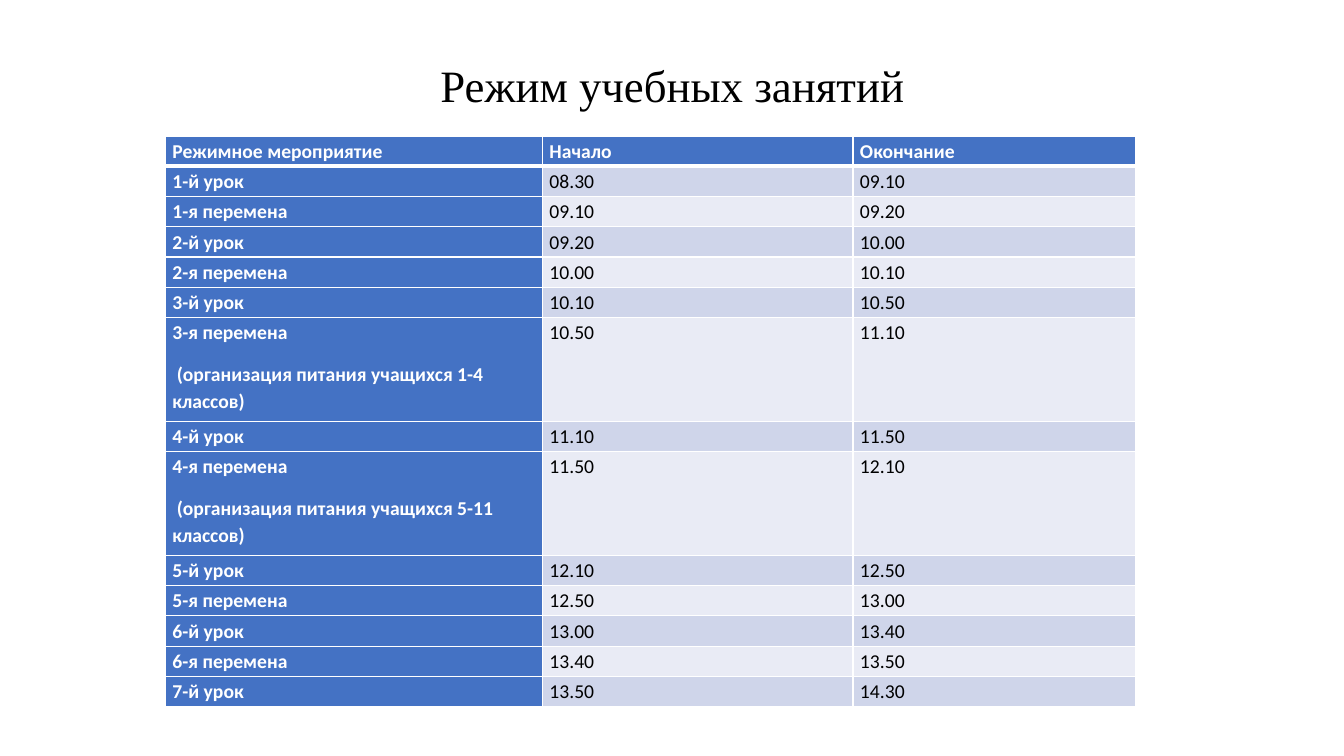
"""Build the slide with the timetable of lessons and breaks."""
from lxml import etree
from pptx import Presentation
from pptx.dml.color import RGBColor
from pptx.enum.text import MSO_ANCHOR, PP_ALIGN
from pptx.oxml.ns import qn
from pptx.util import Pt

PX = 9144
CENTER = PP_ALIGN.CENTER
MIDDLE = MSO_ANCHOR.MIDDLE
BLUE, WHITE, BLACK = "4472C4", "FFFFFF", "000000"
BANDS = ["E9EBF5", "CFD5EA"]


def style(run, font, size, color, bold=False):
    """Set the font of a run."""
    run.font.name = font
    run.font.size = Pt(size)
    run.font.bold = bold
    run.font.color.rgb = RGBColor.from_string(color)


def border(cell, side, width):
    """Draw one white edge of a cell."""
    props = cell._tc.get_or_add_tcPr()
    line = etree.SubElement(props, qn("a:ln" + side), w=str(Pt(width)))
    fill = etree.SubElement(line, qn("a:solidFill"))
    etree.SubElement(fill, qn("a:srgbClr"), val=WHITE)


deck = Presentation()
deck.slide_width, deck.slide_height = 1333 * PX, 750 * PX
slide = deck.slides.add_slide(deck.slide_layouts[5])

title = slide.shapes.title
title.left, title.top = 92 * PX, 40 * PX
title.width, title.height = 1150 * PX, 95 * PX
title.text_frame.text = "Режим учебных занятий"
title.text_frame.vertical_anchor = MIDDLE
head = title.text_frame.paragraphs[0]
head.alignment = CENTER
head.line_spacing = 0.9
style(head.runs[0], "Times New Roman", 32, BLACK)

times = ["08.30", "09.10", "09.20", "10.00", "10.10", "10.50", "11.10",
         "11.50", "12.10", "12.50", "13.00", "13.40", "13.50", "14.30"]
meals = {3: "1-4", 4: "5-11"}
rows = [["Режимное мероприятие", "Начало", "Окончание"]]
for i, (start, end) in enumerate(zip(times, times[1:])):
    num = i // 2 + 1
    name = f"{num}-я перемена" if i % 2 else f"{num}-й урок"
    if i % 2 and num in meals:
        name += f"\n (организация питания учащихся {meals[num]} классов)"
    rows.append([name, start, end])

frame = slide.shapes.add_table(len(rows), 3, 164 * PX, 135 * PX, 962 * PX, 570 * PX)
table = frame.table
for col, width in zip(table.columns, [374, 308, 280]):
    col.width = width * PX

for r, row in enumerate(rows):
    table.rows[r].height = (103 if "\n" in row[0] else 30) * PX
    for c, text in enumerate(row):
        cell = table.cell(r, c)
        cell.margin_left = cell.margin_right = 7 * PX
        cell.margin_top = cell.margin_bottom = 0
        for side in "LRTB":
            thick = (r, side) in [(0, "B"), (1, "T")]
            border(cell, side, 3 if thick else 1)
        strong = r == 0 or c == 0
        cell.fill.solid()
        cell.fill.fore_color.rgb = RGBColor.from_string(BLUE if strong else BANDS[r % 2])
        cell.text_frame.text = text
        for para in cell.text_frame.paragraphs:
            para.line_spacing = 1.15
            para.space_after = Pt(10)
            style(para.runs[0], "Calibri", 14, WHITE if strong else BLACK, strong)

deck.save("out.pptx")
